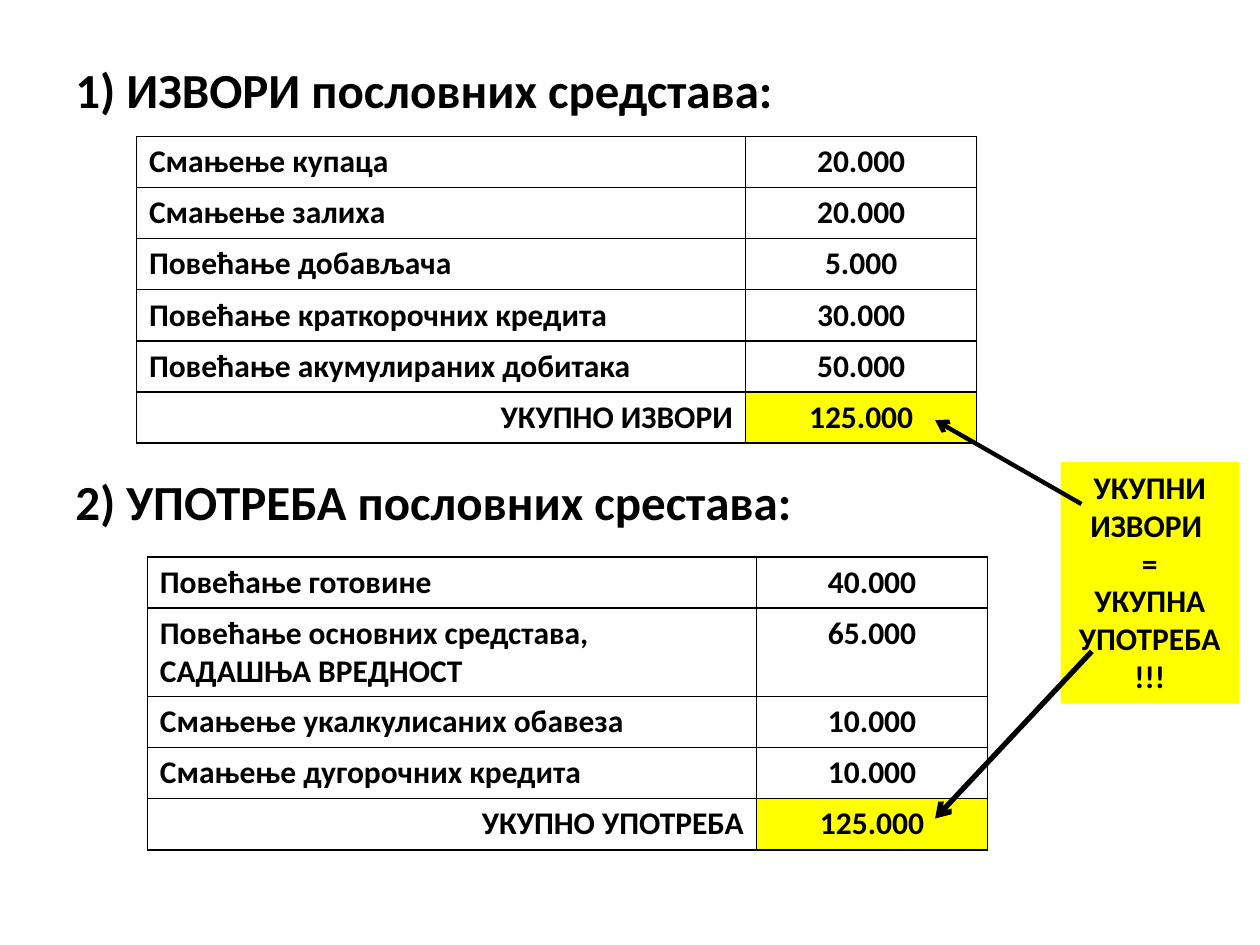
"""Build a slide comparing the sources and uses of business assets."""
from lxml.etree import SubElement
from pptx import Presentation
from pptx.dml.color import RGBColor
from pptx.enum.shapes import MSO_CONNECTOR as CONNECTOR, MSO_SHAPE as SHAPE
from pptx.enum.text import MSO_ANCHOR as ANCHOR, PP_ALIGN as ALIGN
from pptx.oxml.ns import qn
from pptx.util import Cm, Pt

BLACK, YELLOW = "000000", "FFFF00"


def paint(color_format, color):
    color_format.rgb = RGBColor.from_string(color)


def write(frame, text, size=18, align=ALIGN.LEFT, anchor=ANCHOR.TOP):
    frame.word_wrap = True
    frame.vertical_anchor = anchor
    frame.text = text
    for paragraph in frame.paragraphs:
        paragraph.alignment = align
        font = paragraph.runs[0].font
        font.name, font.size, font.bold = "Calibri", Pt(size), True
        paint(font.color, BLACK)


prs = Presentation()
prs.slide_width, prs.slide_height = Cm(25.4), Cm(19.05)
slide = prs.slides.add_slide(prs.slide_layouts[6])

headings = [
    ("1) ИЗВОРИ пословних средстава:", 1.07),
    ("2) УПОТРЕБА пословних срестава:", 9.38),
]
for heading, top in headings:
    heading_box = slide.shapes.add_textbox(Cm(1.27), Cm(top), Cm(22.86), Cm(1.4))
    write(heading_box.text_frame, heading, size=28)

sources = [
    ("Смањење купаца", "20.000"),
    ("Смањење залиха", "20.000"),
    ("Повећање добављача", "5.000"),
    ("Повећање краткорочних кредита", "30.000"),
    ("Повећање акумулираних добитака", "50.000"),
    ("УКУПНО ИЗВОРИ", "125.000"),
]
uses = [
    ("Повећање готовине", "40.000"),
    ("Повећање основних средстава, САДАШЊА ВРЕДНОСТ", "65.000"),
    ("Смањење укалкулисаних обавеза", "10.000"),
    ("Смањење дугорочних кредита", "10.000"),
    ("УКУПНО УПОТРЕБА", "125.000"),
]
column_widths = [12.28, 4.66]
row_height, tall_row_height = 1.03, 1.78

for entries, left, top, amount_anchor in [
    (sources, 2.75, 2.75, ANCHOR.TOP),
    (uses, 2.97, 11.23, ANCHOR.MIDDLE),
]:
    balance = slide.shapes.add_table(
        len(entries), 2, Cm(left), Cm(top),
        Cm(sum(column_widths)), Cm(row_height * len(entries)),
    ).table
    for column, width in zip(balance.columns, column_widths):
        column.width = Cm(width)
    for row, entry in zip(balance.rows, entries):
        is_total = entry is entries[-1]
        row.height = Cm(tall_row_height if len(entry[0]) > 40 else row_height)
        label, amount = row.cells
        write(label.text_frame, entry[0],
              align=ALIGN.RIGHT if is_total else ALIGN.LEFT)
        write(amount.text_frame, entry[1], align=ALIGN.CENTER, anchor=amount_anchor)
        for cell in (label, amount):
            properties = cell._tc.get_or_add_tcPr()
            for side in ("a:lnL", "a:lnR", "a:lnT", "a:lnB"):
                border = SubElement(properties, qn(side), w=str(Pt(1)))
                border_fill = SubElement(border, qn("a:solidFill"))
                SubElement(border_fill, qn("a:srgbClr"), val=BLACK)
            cell.fill.background()
        if is_total:
            amount.fill.solid()
            paint(amount.fill.fore_color, YELLOW)

conclusion = slide.shapes.add_shape(
    SHAPE.RECTANGLE, Cm(21.38), Cm(9.31), Cm(3.6), Cm(4.87))
conclusion.shadow.inherit = False
conclusion.fill.solid()
paint(conclusion.fill.fore_color, YELLOW)
conclusion.line.fill.background()
write(conclusion.text_frame, "УКУПНИ ИЗВОРИ \n=\nУКУПНА УПОТРЕБА\n!!!", align=ALIGN.CENTER)

for start_x, start_y, end_x, end_y, weight in [
    (21.8, 10.16, 18.85, 8.47, 2.5),
    (22.01, 13.13, 18.85, 16.5, 3),
]:
    arrow = slide.shapes.add_connector(
        CONNECTOR.STRAIGHT, Cm(start_x), Cm(start_y), Cm(end_x), Cm(end_y))
    arrow.line.width = Pt(weight)
    paint(arrow.line.color, BLACK)
    SubElement(arrow.line._get_or_add_ln(), qn("a:tailEnd"), type="arrow")
    SubElement(arrow._element.spPr, qn("a:effectLst"))

prs.save("out.pptx")
